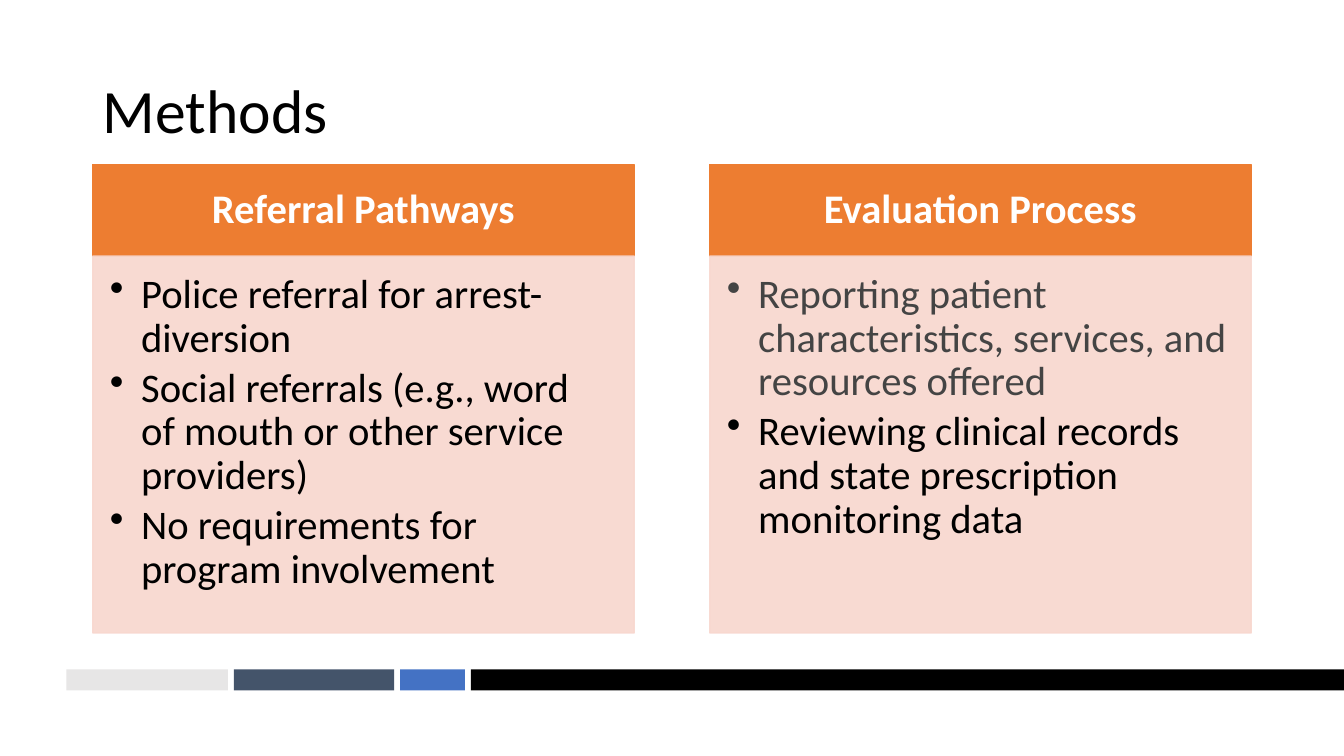
from dataclasses import dataclass

from lxml import etree
from pptx import Presentation
from pptx.dml.color import RGBColor
from pptx.enum import shapes, text
from pptx.oxml import ns
from pptx.util import Inches, Pt


@dataclass(frozen=True)
class Theme:
    font: str = "Calibri"
    title_size: int = 44
    body_size: int = 29
    black: str = "000000"
    white: str = "FFFFFF"
    grey: str = "444444"
    orange: str = "ED7D31"
    peach: str = "F8D7CE"
    blue: str = "4472C4"
    slate: str = "44546A"
    silver: str = "E7E6E6"


THEME = Theme()

PANELS = [
    ("Referral Pathways", [
        ("Police referral for arrest-diversion", THEME.black),
        ("Social referrals (e.g., word of mouth or other service providers)", THEME.black),
        ("No requirements for program involvement", THEME.black),
    ]),
    ("Evaluation Process", [
        ("Reporting patient characteristics, services, and resources offered", THEME.grey),
        ("Reviewing clinical records and state prescription monitoring data", THEME.black),
    ]),
]


def style_runs(p, size, color, bold=False):
    p.line_spacing = 0.9
    for r in p.runs:
        r.font.name = THEME.font
        r.font.size = Pt(size)
        r.font.bold = bold
        r.font.color.rgb = RGBColor.from_string(color)


def set_insets(tf, left, top, right, bottom):
    tf.word_wrap = True
    tf.margin_left, tf.margin_top = Inches(left), Inches(top)
    tf.margin_right, tf.margin_bottom = Inches(right), Inches(bottom)


def add_rect(s, left, top, width, height, color, outlined=False, alpha=None):
    """Add a flat rectangle; alpha is its opacity in percent."""
    sp = s.shapes.add_shape(shapes.MSO_SHAPE.RECTANGLE, Inches(left), Inches(top),
                            Inches(width), Inches(height))
    sp.shadow.inherit = False
    sp.fill.solid()
    sp.fill.fore_color.rgb = RGBColor.from_string(color)
    if outlined:
        sp.line.color.rgb = RGBColor.from_string(color)
        sp.line.width = Pt(1)
    else:
        sp.line.fill.background()
    if alpha is not None:
        for clr in sp.element.spPr.iter(ns.qn("a:srgbClr")):
            etree.SubElement(clr, ns.qn("a:alpha"), val=str(alpha * 1000))
    return sp


def add_bullet(p, indent):
    pPr = p._p.get_or_add_pPr()
    pPr.set("marL", str(Inches(indent)))
    pPr.set("indent", str(-Inches(indent)))
    etree.SubElement(pPr, ns.qn("a:buChar"), char="•")


def add_title(s, left, top, width, height, title):
    sp = s.shapes.title
    sp.left, sp.top = Inches(left), Inches(top)
    sp.width, sp.height = Inches(width), Inches(height)
    tf = sp.text_frame
    tf.text = title
    tf.vertical_anchor = text.MSO_ANCHOR.MIDDLE
    p = tf.paragraphs[0]
    p.alignment = text.PP_ALIGN.LEFT
    style_runs(p, THEME.title_size, THEME.black)


def add_panel(s, left, top, width, height, heading, bullets):
    """Place a heading band over a box of bullets."""
    band = 0.91
    tf = add_rect(s, left, top, width, band, THEME.orange, outlined=True).text_frame
    set_insets(tf, 0.23, 0.13, 0.23, 0.13)
    tf.vertical_anchor = text.MSO_ANCHOR.MIDDLE
    tf.text = heading
    p = tf.paragraphs[0]
    p.alignment = text.PP_ALIGN.CENTER
    style_runs(p, THEME.body_size, THEME.white, bold=True)

    tf = add_rect(s, left, top + band, width, height - band, THEME.peach,
                  outlined=True, alpha=90).text_frame
    set_insets(tf, 0.17, 0.17, 0.23, 0.25)
    tf.vertical_anchor = text.MSO_ANCHOR.TOP
    for i, (line, color) in enumerate(bullets):
        p = tf.paragraphs[0] if i == 0 else tf.add_paragraph()
        p.text = line
        p.level = 1
        p.alignment = text.PP_ALIGN.LEFT
        add_bullet(p, 0.31)
        p.space_after = Pt(0.15 * THEME.body_size)
        style_runs(p, THEME.body_size, color)


def add_footer_bar(s, left, top, width, height):
    """Place the coloured segments in a row, the last one filling the rest."""
    gap, x = 0.06, left
    for seg, color in [(1.6, THEME.silver), (1.59, THEME.slate), (0.64, THEME.blue)]:
        add_rect(s, x, top, seg, height, color)
        x += seg + gap
    add_rect(s, x, top, left + width - x, height, THEME.black)


def build_methods_slide(prs):
    s = prs.slides.add_slide(prs.slide_layouts[5])
    add_footer_bar(s, 0.66, 6.64, 12.67, 0.21)
    add_title(s, 0.92, 0.4, 11.5, 1.45, "Methods")
    width, gap = 5.37, 0.75
    for i, (heading, bullets) in enumerate(PANELS):
        add_panel(s, 0.92 + i * (width + gap), 1.63, width, 4.65, heading, bullets)


def main():
    prs = Presentation()
    prs.slide_width, prs.slide_height = Inches(13.33), Inches(7.5)
    build_methods_slide(prs)
    prs.save("out.pptx")


if __name__ == "__main__":
    main()
